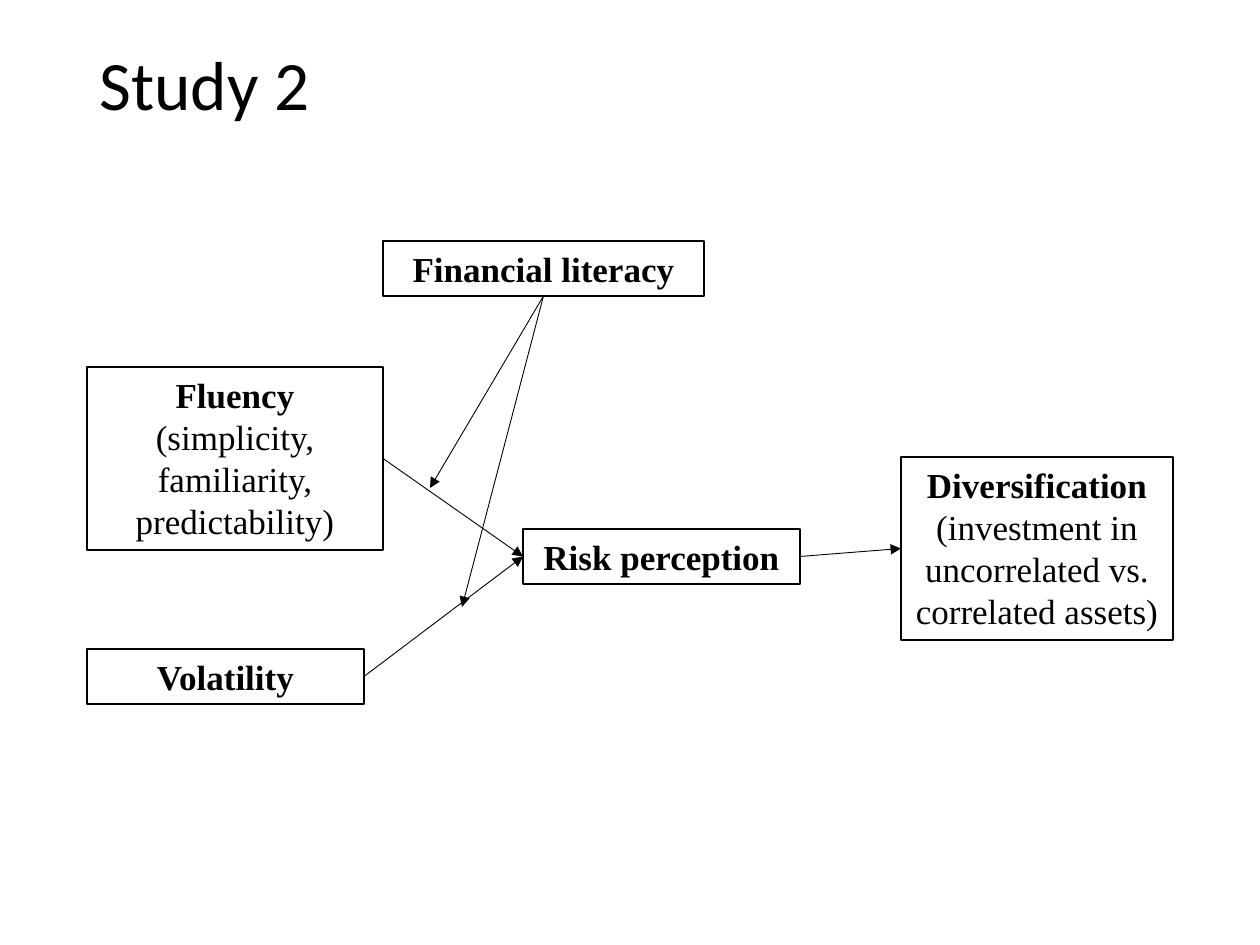
"""Build the Study 2 slide: a path diagram from fluency and volatility to diversification."""
from dataclasses import dataclass

from lxml import etree
from pptx import Presentation
from pptx import util as u
from pptx.dml.color import RGBColor
from pptx.enum import shapes, text
from pptx.oxml import ns

PX_PER_INCH = 126
TOP, LEFT, BOTTOM, RIGHT = range(4)


def px(length):
    """Turn pixels into EMU."""
    return u.Emu(round(length * 914400 / PX_PER_INCH))


@dataclass(frozen=True)
class Theme:
    """Colours, fonts, type sizes and line widths in points."""

    ink: RGBColor = RGBColor(0, 0, 0)
    paper: RGBColor = RGBColor(255, 255, 255)
    title_font: str = "Calibri"
    box_font: str = "Times New Roman"
    title_size: float = 39.6
    box_size: float = 20
    border: float = 1
    arrow: float = 0.5


def apply(target, values):
    """Set each attribute of the target from a dict."""
    for name, value in values.items():
        setattr(target, name, value)


class Diagram:
    """Hold the theme and the current slide, and draw each kind of element."""

    def __init__(self, slide, theme):
        """Keep the slide and the theme."""
        self.slide = slide
        self.theme = theme

    def style_font(self, font, **values):
        """Format a font in the ink colour."""
        apply(font, values)
        font.color.rgb = self.theme.ink

    def style_line(self, line, width):
        """Format a line in the ink colour."""
        line.color.rgb = self.theme.ink
        line.width = u.Pt(width)

    def title(self, wording, left, top, width, height):
        """Place and format the title placeholder."""
        heading = self.slide.shapes.title
        apply(heading, {"left": px(left), "top": px(top),
                        "width": px(width), "height": px(height)})
        frame = heading.text_frame
        frame.text = wording
        apply(frame, {"word_wrap": True, "auto_size": text.MSO_AUTO_SIZE.NONE,
                      "vertical_anchor": text.MSO_ANCHOR.MIDDLE})
        line = frame.paragraphs[0]
        apply(line, {"alignment": text.PP_ALIGN.LEFT, "line_spacing": 0.9})
        self.style_font(line.runs[0].font, name=self.theme.title_font,
                        size=u.Pt(self.theme.title_size))

    def box(self, concept, left, top, width, height, detail=""):
        """Draw a bordered box with a bold concept and an optional plain detail."""
        box = self.slide.shapes.add_shape(
            shapes.MSO_SHAPE.RECTANGLE, px(left), px(top), px(width), px(height))
        box.shadow.inherit = False
        box.fill.solid()
        box.fill.fore_color.rgb = self.theme.paper
        self.style_line(box.line, self.theme.border)
        anchor = text.MSO_ANCHOR.TOP if detail else text.MSO_ANCHOR.MIDDLE
        apply(box.text_frame, {"word_wrap": True, "vertical_anchor": anchor,
                               "auto_size": text.MSO_AUTO_SIZE.SHAPE_TO_FIT_TEXT})
        label = box.text_frame.paragraphs[0]
        label.alignment = text.PP_ALIGN.CENTER
        for wording, bold in ((concept, True), (detail, False)):
            if wording:
                run = label.add_run()
                run.text = wording
                self.style_font(run.font, name=self.theme.box_font, bold=bold,
                                size=u.Pt(self.theme.box_size))
        return box

    def arrow(self, cause, side, effect=None, point=(0, 0)):
        """Draw an arrow from a box side to the left of another box or to a point."""
        arrow = self.slide.shapes.add_connector(
            shapes.MSO_CONNECTOR.STRAIGHT, 0, 0, px(point[0]), px(point[1]))
        arrow.begin_connect(cause, side)
        if effect is not None:
            arrow.end_connect(effect, LEFT)
        self.style_line(arrow.line, self.theme.arrow)
        properties = arrow._element.spPr
        etree.SubElement(properties.find(ns.qn("a:ln")), ns.qn("a:tailEnd"), type="triangle")
        etree.SubElement(properties, ns.qn("a:effectLst"))


def main():
    """Build and save the slide."""
    deck = Presentation()
    apply(deck, {"slide_width": u.Inches(10), "slide_height": u.Inches(7.5)})
    diagram = Diagram(deck.slides.add_slide(deck.slide_layouts[5]), Theme())

    diagram.title("Study 2", 87, 50, 1086, 76)
    literacy = diagram.box("Financial literacy", 383, 241, 321, 55)
    diversification = diagram.box("Diversification", 901, 457, 272, 183,
                                  " (investment in uncorrelated vs. correlated assets)")
    fluency = diagram.box("Fluency", 87, 367, 296, 183,
                          " (simplicity, familiarity, predictability)")
    volatility = diagram.box("Volatility", 87, 649, 277, 55)
    risk = diagram.box("Risk perception", 523, 529, 277, 55)

    for cause, effect in ((fluency, risk), (volatility, risk), (risk, diversification)):
        diagram.arrow(cause, RIGHT, effect)
    for moderated_path in ((430, 488), (462, 607)):
        diagram.arrow(literacy, BOTTOM, point=moderated_path)

    deck.save("out.pptx")


if __name__ == "__main__":
    main()
